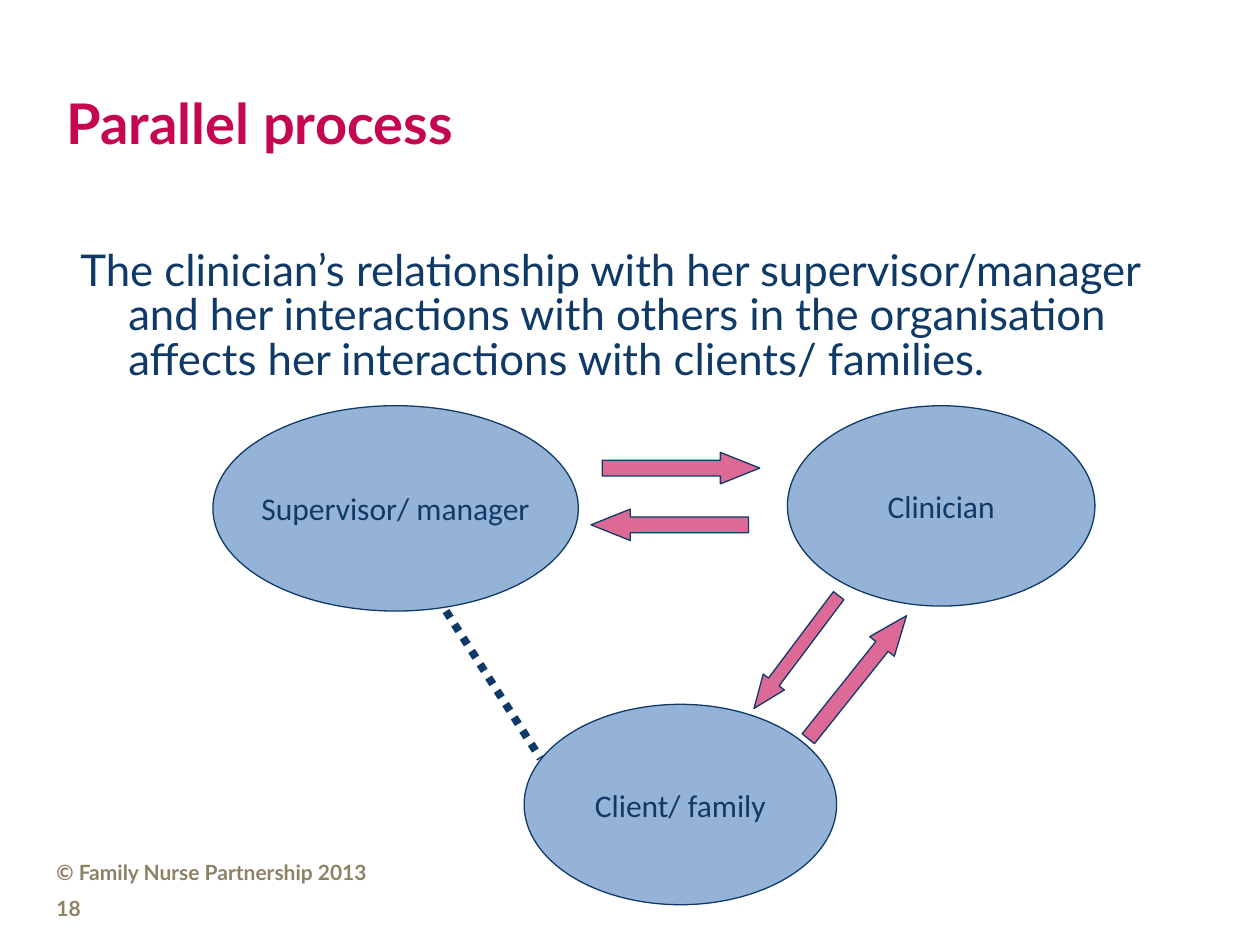
from lxml.etree import SubElement
from pptx import Presentation
from pptx.dml.color import RGBColor
from pptx.enum.dml import MSO_LINE
from pptx.enum.shapes import MSO_CONNECTOR, MSO_SHAPE
from pptx.enum.text import MSO_ANCHOR, PP_ALIGN
from pptx.oxml.ns import qn
from pptx.util import Inches, Pt

COLORS = {"navy": "0F3A68", "pink": "C50650", "blue": "4F81BD", "khaki": "8E8265"}


def color(name):
    return RGBColor.from_string(COLORS[name])


def write(frame, text, size, ink, font="Lato", bold=False, align=PP_ALIGN.LEFT):
    para = frame.paragraphs[0]
    para.alignment = align
    span = para.add_run()
    span.text = text
    span.font.name = font
    span.font.size = Pt(size)
    span.font.bold = bold
    span.font.color.rgb = color(ink)
    return para


def add_text(page, box, *args, **kwargs):
    frame = page.shapes.add_textbox(*map(Inches, box)).text_frame
    frame.word_wrap = True
    return write(frame, *args, **kwargs)


def add_tinted(page, kind, box, fill):
    shape = page.shapes.add_shape(kind, *map(Inches, box))
    shape.shadow.inherit = False
    shape.fill.solid()
    shape.fill.fore_color.rgb = color(fill)
    # 60 % opacity
    tint = shape.fill._xPr.find(qn("a:solidFill"))[0]
    SubElement(tint, qn("a:alpha"), val="60000")
    shape.line.color.rgb = color("navy")
    shape.line.width = Pt(0.75)
    return shape


def add_title(page, box):
    title = page.shapes.title
    title.left, title.top, title.width, title.height = map(Inches, box)
    title.text_frame.vertical_anchor = MSO_ANCHOR.MIDDLE
    write(title.text_frame, "Parallel process", 32, "pink", bold=True)


def add_statement(page, box):
    para = add_text(
        page, box,
        "The clinician’s relationship with her supervisor/manager and her "
        "interactions with others in the organisation affects her "
        "interactions with clients/ families.", 25, "navy")
    para.line_spacing = 0.85
    hanging = Inches(0.38)
    props = para._p.get_or_add_pPr()
    props.set("marL", str(hanging))
    props.set("indent", str(-hanging))


def add_person(page, box, label):
    oval = add_tinted(page, MSO_SHAPE.OVAL, box, "blue")
    frame = oval.text_frame
    frame.word_wrap = False
    frame.vertical_anchor = MSO_ANCHOR.MIDDLE
    write(frame, label, 18, "navy", font="Calibri", align=PP_ALIGN.CENTER)


def add_arrow(page, box, angle):
    arrow = add_tinted(page, MSO_SHAPE.RIGHT_ARROW, box, "pink")
    arrow.adjustments[0] = 0.5
    arrow.adjustments[1] = 1.25
    arrow.rotation = angle


def add_dotted_link(page, start, end):
    link = page.shapes.add_connector(
        MSO_CONNECTOR.STRAIGHT, *map(Inches, start + end))
    link.line.color.rgb = color("navy")
    link.line.width = Pt(4.5)
    link.line.dash_style = MSO_LINE.ROUND_DOT
    SubElement(link._element.spPr, qn("a:effectLst"))


def add_diagram(page, box):
    left, top, width, height = box
    # People, placed from the corner of the diagram
    people = [
        ("Supervisor/ manager", 0, 0, 2.9, 1.63),
        ("Client/ family", 2.47, height - 1.59, 2.48, 1.59),
        ("Clinician", width - 2.44, 0, 2.44, 1.59),
    ]
    for label, x, y, w, h in people:
        add_person(page, (left + x, top + y, w, h), label)
    # Two-way exchanges between them
    arrows = [
        (3.09, 0.37, 1.25, 0.25, 0),
        (3, 0.82, 1.25, 0.25, 180),
        (4.07, 1.85, 1.12, 0.21, 126.9),
        (4.49, 2.03, 1.25, 0.25, 308.6),
    ]
    for x, y, w, h, angle in arrows:
        add_arrow(page, (left + x, top + y, w, h), angle)
    # Indirect influence
    add_dotted_link(page, (left + 1.85, top + 1.63), (left + 2.6, top + 2.8))


def add_footer(page, box):
    left, top, width, height = box
    for row, text in enumerate(["© Family Nurse Partnership 2013", "18"]):
        add_text(page, (left, top + row * 0.29, width, height),
                 text, 12, "khaki", bold=True)


def main():
    deck = Presentation()
    deck.slide_width, deck.slide_height = Inches(10), Inches(7.5)
    page = deck.slides.add_slide(deck.slide_layouts[5])
    add_footer(page, (0.35, 6.77, 2.83, 0.42))
    add_title(page, (0.43, 0.47, 9.57, 1))
    add_statement(page, (0.54, 1.94, 8.76, 1.17))
    add_diagram(page, (1.69, 3.22, 7, 3.96))
    deck.save("out.pptx")


if __name__ == "__main__":
    main()
